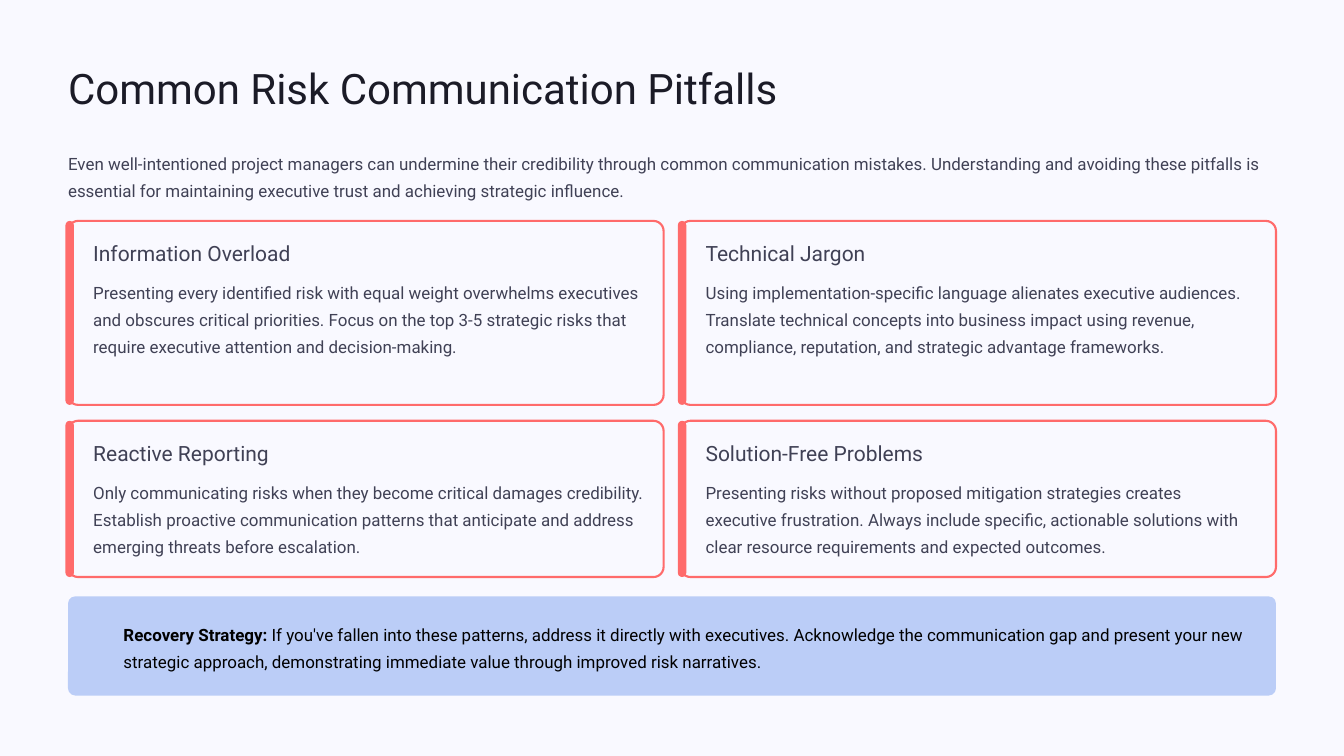
from dataclasses import dataclass

from pptx import Presentation
from pptx.dml.color import RGBColor
from pptx.enum.shapes import MSO_SHAPE as Kind
from pptx.enum.text import MSO_ANCHOR as Anchor, MSO_AUTO_SIZE as Fit, PP_ALIGN as Align
from pptx.util import Inches, Pt


@dataclass(frozen=True)
class Theme:
    font: str = "Roboto"
    page: str = "F9F9FF"
    title: str = "1B1B27"
    body: str = "404155"
    accent: str = "FF6B6B"
    panel: str = "BBCDF7"
    strong: str = "000000"
    # Type size and line spacing in points
    big: tuple = (36, 45.5)
    head: tuple = (18, 22.5)
    text: tuple = (14.5, 23)


def write(frame, *runs, font, size, color, wrap=True):
    """Fill a frame with runs; a run is a string or a (string, bold) pair."""
    frame.auto_size = Fit.NONE
    frame.word_wrap = wrap
    frame.vertical_anchor = Anchor.TOP
    frame.margin_left = frame.margin_right = 0
    frame.margin_top = frame.margin_bottom = 0
    para = frame.paragraphs[0]
    para.alignment = Align.LEFT
    para.line_spacing = Pt(size[1])
    for item in runs:
        text, bold = (item, False) if isinstance(item, str) else item
        run = para.add_run()
        run.text = text
        run.font.name = font
        run.font.size = Pt(size[0])
        run.font.bold = bold
        run.font.color.rgb = RGBColor.from_string(color)


class Deck:
    def __init__(self, theme):
        self.theme = theme
        self.prs = Presentation()
        self.prs.slide_width, self.prs.slide_height = Inches(16), Inches(9)
        self.slide = self.prs.slides.add_slide(self.prs.slide_layouts[5])
        fill = self.slide.background.fill
        fill.solid()
        fill.fore_color.rgb = RGBColor.from_string(theme.page)

    def title(self, text, x, y, w, h):
        shape = self.slide.shapes.title
        shape.left, shape.top = Inches(x), Inches(y)
        shape.width, shape.height = Inches(w), Inches(h)
        write(shape.text_frame, text, font=self.theme.font,
              size=self.theme.big, color=self.theme.title, wrap=False)

    def text(self, x, y, w, h, *runs, size=None, color=None, wrap=True):
        box = self.slide.shapes.add_textbox(*map(Inches, (x, y, w, h)))
        write(box.text_frame, *runs, font=self.theme.font, wrap=wrap,
              size=size or self.theme.text, color=color or self.theme.body)

    def panel(self, x, y, w, h, fill, radius, line=None):
        shape = self.slide.shapes.add_shape(
            Kind.ROUNDED_RECTANGLE, *map(Inches, (x, y, w, h)))
        shape.shadow.inherit = False
        shape.adjustments[0] = radius / min(w, h)
        shape.fill.solid()
        shape.fill.fore_color.rgb = RGBColor.from_string(fill)
        if line:
            shape.line.color.rgb = RGBColor.from_string(line)
            shape.line.width = Pt(1.8)
        else:
            shape.line.fill.background()

    def card(self, x, y, w, h, head, span, body):
        theme = self.theme
        self.panel(x, y, w, h, theme.page, 0.12, line=theme.accent)
        self.panel(x - 0.03, y, 0.1, h, theme.accent, 0.05)
        self.text(x + 0.3, y + 0.22, span, 0.32, head, size=theme.head, wrap=False)
        self.text(x + 0.3, y + 0.66, 6.56, h - 0.9, body)


LEFT, WIDE = 0.81, 14.38
CARD, STEP = 7.09, 7.29
ROWS = [(2.63, 2.19), (5.01, 1.86)]

# Heading, heading width, body
CARDS = [
    ("Information Overload", 2.7,
     "Presenting every identified risk with equal weight overwhelms executives and "
     "obscures critical priorities. Focus on the top 3-5 strategic risks that require "
     "executive attention and decision-making."),
    ("Technical Jargon", 2.53,
     "Using implementation-specific language alienates executive audiences. Translate "
     "technical concepts into business impact using revenue, compliance, reputation, "
     "and strategic advantage frameworks."),
    ("Reactive Reporting", 2.53,
     "Only communicating risks when they become critical damages credibility. Establish "
     "proactive communication patterns that anticipate and address emerging threats "
     "before escalation."),
    ("Solution-Free Problems", 2.96,
     "Presenting risks without proposed mitigation strategies creates executive "
     "frustration. Always include specific, actionable solutions with clear resource "
     "requirements and expected outcomes."),
]


def main():
    deck = Deck(Theme())

    # Title and introduction
    deck.title("Common Risk Communication Pitfalls", LEFT, 0.71, 9.6, 0.63)
    deck.text(LEFT, 1.75, WIDE, 0.65,
              "Even well-intentioned project managers can undermine their credibility "
              "through common communication mistakes. Understanding and avoiding these "
              "pitfalls is essential for maintaining executive trust and achieving "
              "strategic influence.")

    # Two by two grid of pitfalls
    for i, (head, span, body) in enumerate(CARDS):
        row, col = divmod(i, 2)
        top, high = ROWS[row]
        deck.card(LEFT + col * STEP, top, CARD, high, head, span, body)

    # Recovery banner
    deck.panel(LEFT, 7.1, WIDE, 1.18, deck.theme.panel, 0.085)
    deck.text(1.47, 7.36, 13.52, 0.65, ("Recovery Strategy:", True),
              " If you've fallen into these patterns, address it directly with "
              "executives. Acknowledge the communication gap and present your new "
              "strategic approach, demonstrating immediate value through improved "
              "risk narratives.", color=deck.theme.strong)

    deck.prs.save("out.pptx")


if __name__ == "__main__":
    main()
